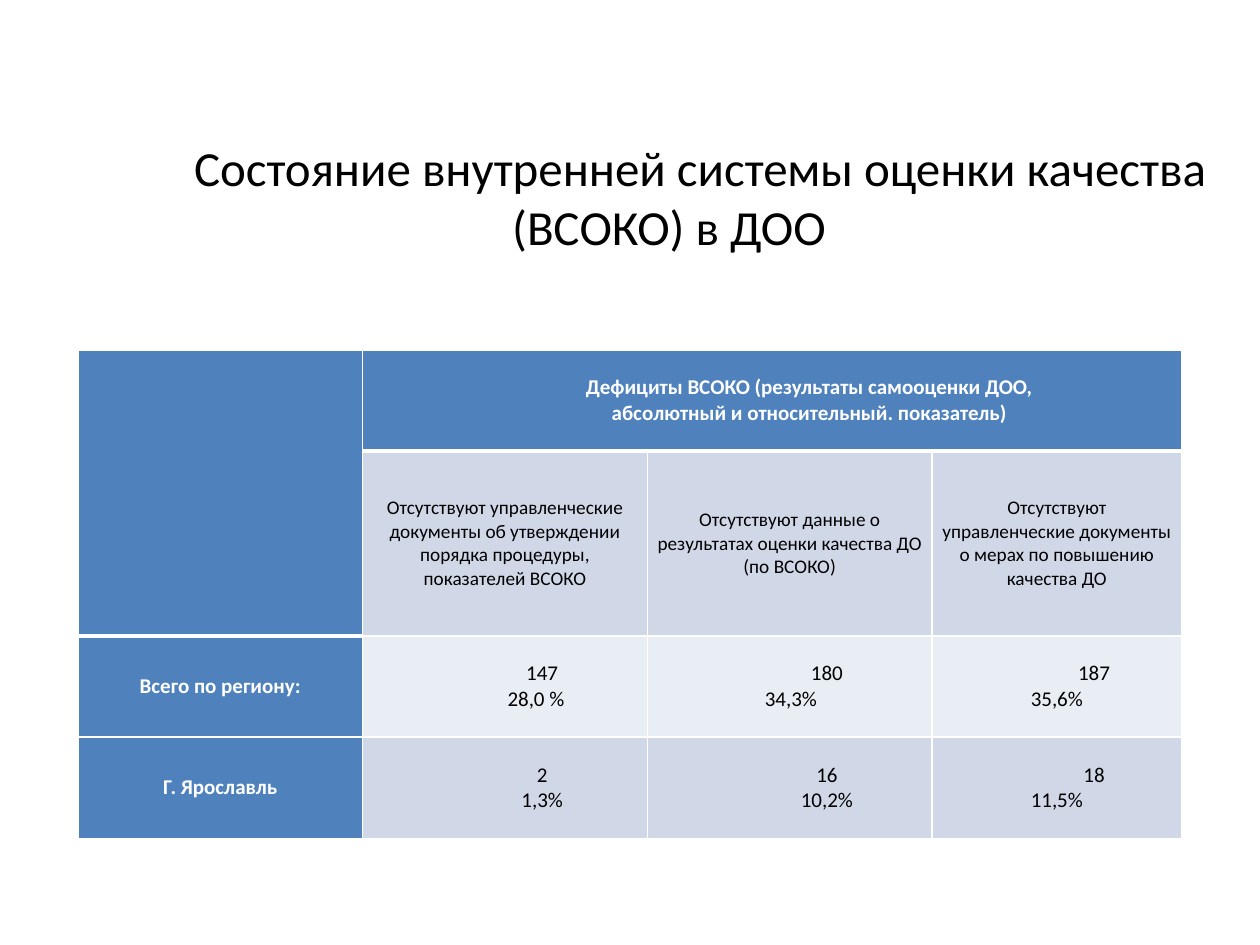
from pptx import Presentation
from pptx.dml.color import RGBColor
from pptx.enum.text import MSO_ANCHOR, PP_ALIGN
from pptx.oxml import parse_xml
from pptx.oxml.ns import nsdecls
from pptx.util import Cm, Pt


def color(value):
    return RGBColor.from_string(value)


def write(tf, lines, size, bold, fill):
    for i, (text, indent) in enumerate(lines):
        p = tf.paragraphs[0] if i == 0 else tf.add_paragraph()
        p.alignment = PP_ALIGN.CENTER
        pPr = p._p.get_or_add_pPr()
        pPr.set("marL", "0")
        pPr.set("indent", str(Cm(indent)))
        r = p.add_run()
        r.text = text
        for key, value in {"name": "Calibri", "size": Pt(size), "bold": bold}.items():
            setattr(r.font, key, value)
        r.font.color.rgb = color(fill)


prs = Presentation()
prs.slide_width, prs.slide_height = Cm(25.4), Cm(19.05)
s = prs.slides.add_slide(prs.slide_layouts[5])

title = s.shapes.title
box = {"left": Cm(1.57), "top": Cm(2.64), "width": Cm(23.83), "height": Cm(3.84)}
for key, value in box.items():
    setattr(title, key, value)
tf = title.text_frame
frame = {"word_wrap": True, "vertical_anchor": MSO_ANCHOR.MIDDLE, "margin_bottom": Cm(1.32)}
for key, value in frame.items():
    setattr(tf, key, value)
write(tf, [("Состояние внутренней системы оценки качества (ВСОКО) в ДОО", 1.25)], 28, False, "000000")

INDENT = 1.5
rows = [
    [[], [("Дефициты ВСОКО (результаты самооценки ДОО,", INDENT),
          ("абсолютный и относительный. показатель)", INDENT)], [], []],
    [[],
     [("Отсутствуют управленческие документы об утверждении порядка процедуры, показателей ВСОКО", 0)],
     [("Отсутствуют данные о результатах оценки качества ДО (по ВСОКО)", 0)],
     [("Отсутствуют управленческие документы о мерах по повышению качества ДО", 0)]],
    [[("Всего по региону:", 0)],
     [("147", INDENT), ("28,0 %", 1.25)],
     [("180", INDENT), ("34,3%", 0.05)],
     [("187", INDENT), ("35,6%", 0)]],
    [[("Г. Ярославль", 0)],
     [("2", INDENT), ("1,3%", INDENT)],
     [("16", INDENT), ("10,2%", INDENT)],
     [("18", INDENT), ("11,5%", 0)]],
]
widths = [5.74, 5.74, 5.74, 5.03]
heights = [2.03, 3.73, 2.04, 2.04]
bands = ["4F81BD", "D0D8E8", "E9EDF4", "D0D8E8"]

table = s.shapes.add_table(4, 4, Cm(1.57), Cm(7.06), Cm(sum(widths)), Cm(sum(heights))).table
for column, width in zip(table.columns, widths):
    column.width = Cm(width)
for row, height in zip(table.rows, heights):
    row.height = Cm(height)
table.cell(0, 0).merge(table.cell(1, 0))
table.cell(0, 1).merge(table.cell(0, 3))

cell_format = {"margin_left": Cm(0.18), "margin_right": Cm(0.18), "margin_top": 0,
               "margin_bottom": 0, "vertical_anchor": MSO_ANCHOR.MIDDLE}
for i, row in enumerate(rows):
    for j, lines in enumerate(row):
        cell = table.cell(i, j)
        for key, value in cell_format.items():
            setattr(cell, key, value)
        head = i == 0 or j == 0
        thick_top = (i == 1 and j > 0) or (i == 2 and j == 0)
        thick_bottom = i == 0 or (i == 1 and j == 0)
        tcPr = cell._tc.get_or_add_tcPr()
        for side, width in {"L": 1, "R": 1, "T": 3 if thick_top else 1,
                            "B": 3 if thick_bottom else 1}.items():
            tcPr.append(parse_xml(
                f'<a:ln{side} {nsdecls("a")} w="{Pt(width)}"><a:solidFill>'
                f'<a:srgbClr val="FFFFFF"/></a:solidFill></a:ln{side}>'))
        cell.fill.solid()
        cell.fill.fore_color.rgb = color("4F81BD" if head else bands[i])
        write(cell.text_frame, lines, 11 if i == 1 else 12, head, "FFFFFF" if head else "000000")

prs.save("out.pptx")
